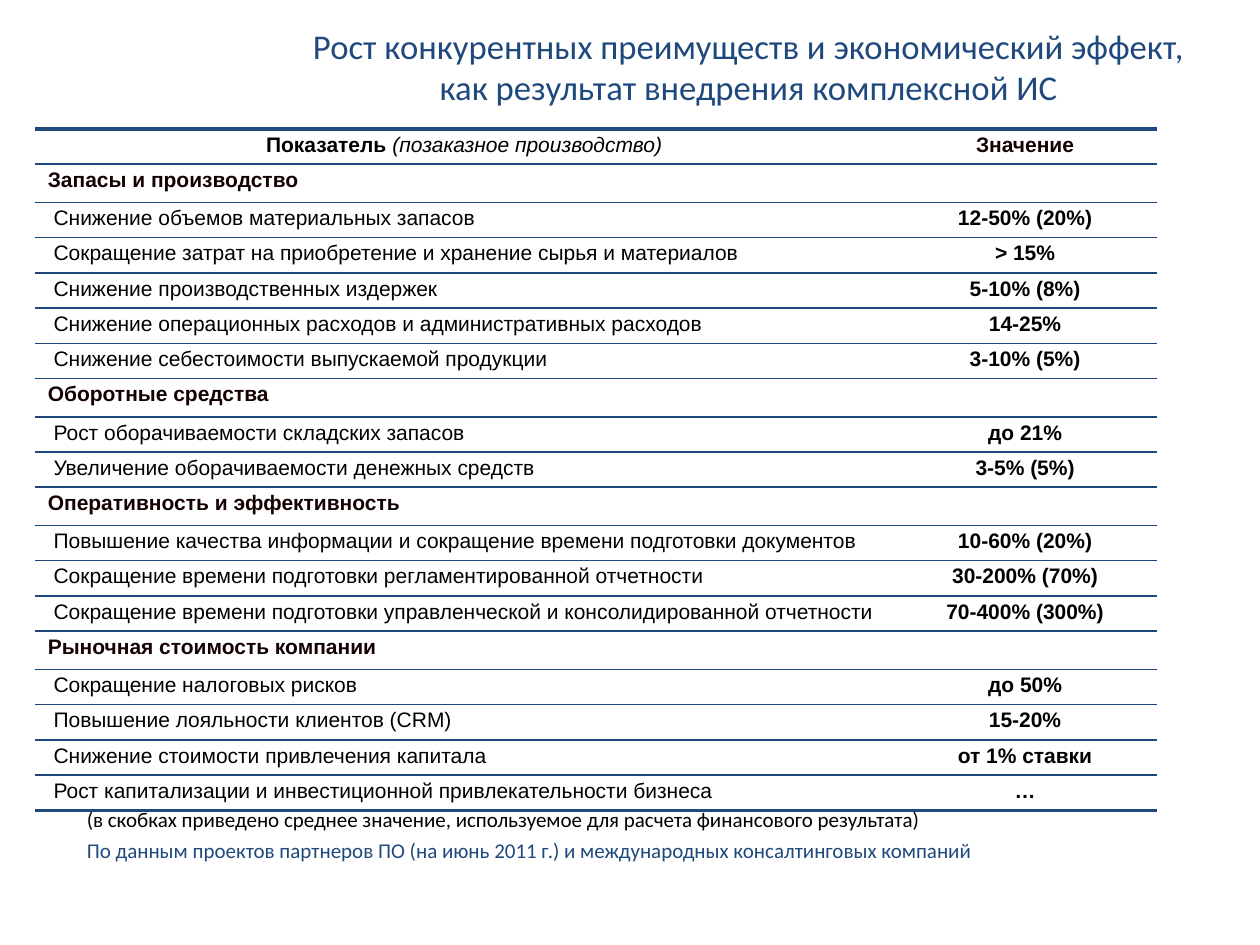
from lxml.etree import SubElement
from pptx import Presentation
from pptx.dml.color import RGBColor
from pptx.enum.text import MSO_ANCHOR as Anchor, MSO_AUTO_SIZE as AutoSize, PP_ALIGN as Align
from pptx.oxml.ns import qn
from pptx.util import Cm, Pt

NAVY, BLACK, DARK = "1F497D", "000000", "140000"

# Each section: heading, then (indicator, value) pairs
SECTIONS = [
    ("Запасы и производство", [
        ("Снижение объемов материальных запасов", "12-50% (20%)"),
        ("Сокращение затрат на приобретение и хранение сырья и материалов", "> 15%"),
        ("Снижение производственных издержек", "5-10% (8%)"),
        ("Снижение операционных расходов и административных расходов", "14-25%"),
        ("Снижение себестоимости выпускаемой продукции", "3-10% (5%)"),
    ]),
    ("Оборотные средства", [
        ("Рост оборачиваемости складских запасов", "до 21%"),
        ("Увеличение оборачиваемости денежных средств", "3-5% (5%)"),
    ]),
    ("Оперативность и эффективность", [
        ("Повышение качества информации и сокращение времени подготовки документов",
         "10-60% (20%)"),
        ("Сокращение времени подготовки регламентированной отчетности", "30-200% (70%)"),
        ("Сокращение времени подготовки управленческой и консолидированной отчетности",
         "70-400% (300%)"),
    ]),
    ("Рыночная стоимость компании", [
        ("Сокращение налоговых рисков", "до 50%"),
        ("Повышение лояльности клиентов (CRM)", "15-20%"),
        ("Снижение стоимости привлечения капитала", "от 1% ставки"),
        ("Рост капитализации и инвестиционной привлекательности бизнеса", "…"),
    ]),
]


def rgb(hex_color):
    return RGBColor.from_string(hex_color)


def write(paragraph, text, *, font="Arial", size=12, color=BLACK, bold=False,
          italic=False, align=Align.LEFT):
    paragraph.alignment = align
    run = paragraph.add_run()
    run.text = text
    run.font.name, run.font.size = font, Pt(size)
    run.font.bold, run.font.italic = bold, italic
    run.font.color.rgb = rgb(color)


class EffectSlide:
    heading_font = "Calibri"
    rule_color = NAVY
    thin, thick = 1, 2.25
    row_height = Cm(0.71)
    item_margin = Cm(0.37)

    def __init__(self, deck):
        self.slide = deck.slides.add_slide(deck.slide_layouts[6])

    def text(self, words, left, top, width, height, *, anchor=Anchor.TOP,
             wrap=True, grow=False, **style):
        frame = self.slide.shapes.add_textbox(
            Cm(left), Cm(top), Cm(width), Cm(height)).text_frame
        frame.word_wrap = wrap
        frame.auto_size = AutoSize.SHAPE_TO_FIT_TEXT if grow else AutoSize.NONE
        frame.vertical_anchor = anchor
        write(frame.paragraphs[0], words, font=self.heading_font, **style)

    def table(self, row_count, left, top, widths):
        frame = self.slide.shapes.add_table(
            row_count, len(widths), Cm(left), Cm(top), Cm(sum(widths)),
            self.row_height * row_count)
        grid = frame.table
        grid.first_row = grid.horz_banding = False
        for column, width in zip(grid.columns, widths):
            column.width = Cm(width)
        for number, row in enumerate(grid.rows):
            row.height = self.row_height
            above = self.thin if number else self.thick
            below = self.thin if number < row_count - 1 else self.thick
            for cell in row.cells:
                self.rule(cell, above, below)
                cell.fill.background()
                cell.text_frame.paragraphs[0].line_spacing = 0.9
        return grid

    def rule(self, cell, above, below):
        props = cell._tc.get_or_add_tcPr()
        for side, width in (("lnL", 0), ("lnR", 0), ("lnT", above), ("lnB", below)):
            line = SubElement(props, qn(f"a:{side}"), w=str(Pt(width)))
            if width:
                fill = SubElement(line, qn("a:solidFill"))
                SubElement(fill, qn("a:srgbClr"), val=self.rule_color)
            else:
                SubElement(line, qn("a:noFill"))

    def cell(self, cell, words, **style):
        write(cell.text_frame.paragraphs[0], words, **style)

    def empty_cell(self, cell):
        # Keeps the row from growing to the default text size
        SubElement(cell.text_frame.paragraphs[0]._p, qn("a:endParaRPr"), sz="1200")


def main():
    deck = Presentation()
    deck.slide_width, deck.slide_height = Cm(25.4), Cm(19.05)
    page = EffectSlide(deck)

    # Title
    page.text("Рост конкурентных преимуществ и экономический эффект, "
              "как результат внедрения комплексной ИС",
              5.89, 0.33, 18.39, 2.01, anchor=Anchor.MIDDLE,
              size=19.8, color=NAVY, align=Align.CENTER)

    # Table header
    row_count = 1 + sum(1 + len(items) for _, items in SECTIONS)
    effects = page.table(row_count, 0.71, 2.6, [17.3, 5.31])
    indicator, value = effects.rows[0].cells
    page.cell(indicator, "Показатель ", bold=True, align=Align.CENTER)
    page.cell(indicator, "(позаказное производство)", italic=True, align=Align.CENTER)
    page.cell(value, "Значение", color=DARK, bold=True, align=Align.CENTER)

    # Sections and their indicators
    body = iter(list(effects.rows)[1:])
    for heading, items in SECTIONS:
        indicator, value = next(body).cells
        page.cell(indicator, heading, color=DARK, bold=True)
        page.empty_cell(value)
        for name, effect in items:
            indicator, value = next(body).cells
            indicator.margin_left = page.item_margin
            page.cell(indicator, name)
            page.cell(value, effect, bold=True, align=Align.CENTER)

    # Notes under the table
    page.text("По данным проектов партнеров ПО (на июнь 2011 г.) "
              "и международных консалтинговых компаний",
              1.5, 16.76, 19.81, 0.76, grow=True, color=NAVY)
    page.text("(в скобках приведено среднее значение, "
              "используемое для расчета финансового результата)",
              1.5, 16.13, 17.5, 0.76, wrap=False, grow=True)

    deck.save("out.pptx")


if __name__ == "__main__":
    main()
